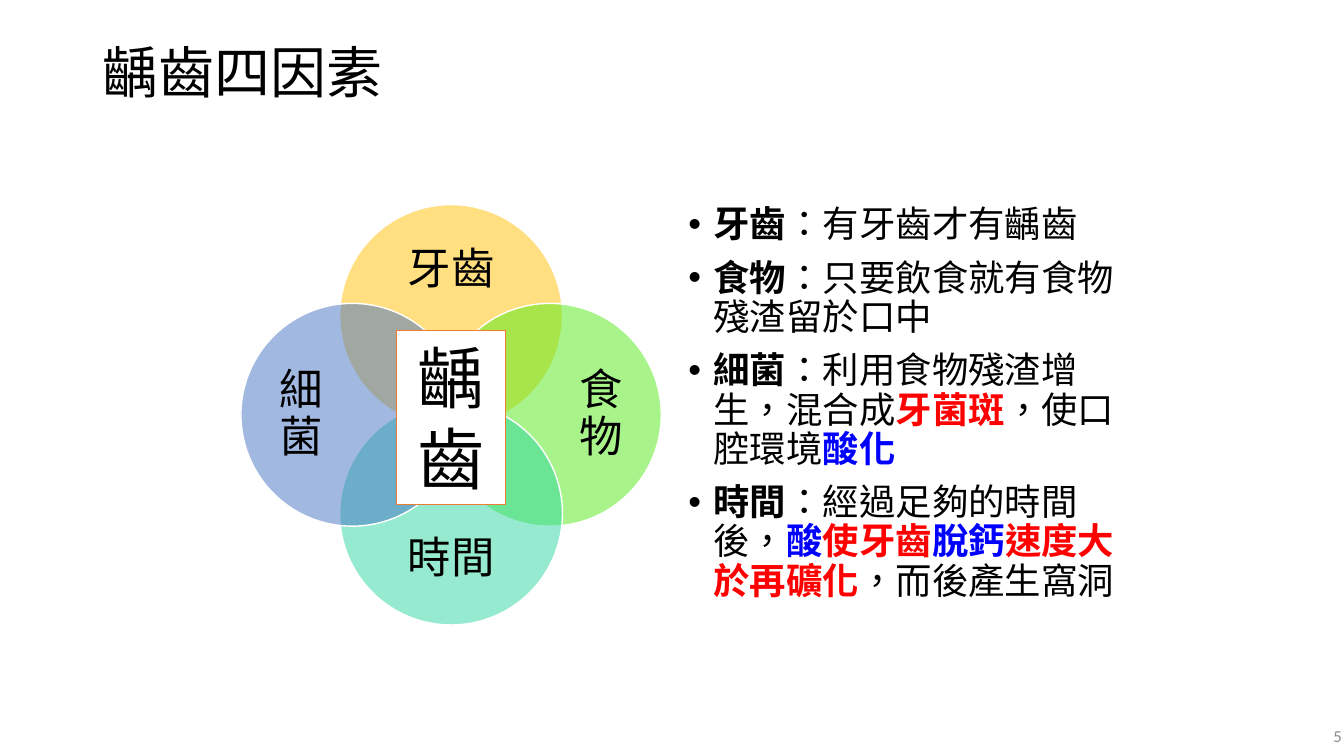
"""Build the slide on the four factors of tooth decay."""
from lxml.etree import SubElement as Sub
from pptx import Presentation
from pptx.dml.color import RGBColor as Rgb
from pptx.enum.shapes import MSO_SHAPE as Kind
from pptx.enum.text import MSO_ANCHOR as Anchor, PP_ALIGN as Align
from pptx.oxml.ns import qn
from pptx.util import Inches, Pt

CELL = Inches(0.1)
COLS, ROWS = 133.33, 75
HAN, LATIN = "Noto Sans CJK SC", "Calibri"
HUE = {
    "ink": "000000", "white": "FFFFFF", "gray": "8C8C8C",
    "red": "FF0000", "blue": "0000FF", "edge": "ED7D31",
    "gold": "FFC000", "lime": "53EB17", "mint": "2ED7A1", "navy": "4472C4",
}
HUB = (44.75, 41.15)
CORE = (44.75, 41.4, 10.8, 17.2)
SIZE, STEP = 22.1, 9.8
PETALS = [
    ("牙齒", "gold", 0, -1),
    ("食物", "lime", 1, 0),
    ("時間", "mint", 0, 1),
    ("細菌", "navy", -1, 0),
]
NOTES = [
    [("牙齒", "ink", True), ("：有牙齒才有齲齒", "ink", False)],
    [("食物", "ink", True), ("：只要飲食就有食物殘渣留於口中", "ink", False)],
    [("細菌", "ink", True), ("：利用食物殘渣增生，混合成", "ink", False),
     ("牙菌斑", "red", True), ("，使口腔環境", "ink", False),
     ("酸化", "blue", True)],
    [("時間", "ink", True), ("：經過足夠的時間後，", "ink", False),
     ("酸", "blue", True), ("使牙齒", "red", True), ("脫鈣", "blue", True),
     ("速度大於再礦化", "red", True), ("，而後產生窩洞", "ink", False)],
]


def color(name):
    return Rgb.from_string(HUE[name])


def cells(*nums):
    return [round(num * CELL) for num in nums]


def center(x, y, wide, high):
    return x - wide / 2, y - high / 2, wide, high


def write(para, text, size, hue="ink", bold=False, face=HAN):
    run = para.add_run()
    run.text = text
    font = run.font
    font.size, font.bold = Pt(size), bold
    font.color.rgb = color(hue)
    font.name = face
    props = run._r.get_or_add_rPr()
    props.set("lang", "zh-TW")
    Sub(props, qn("a:ea"), typeface=LATIN)


def add_box(slide, area, anchor=Anchor.MIDDLE, inset=None):
    frame = slide.shapes.add_textbox(*cells(*area)).text_frame
    frame.word_wrap = True
    frame.vertical_anchor = anchor
    if inset is not None:
        frame.margin_left = frame.margin_right = inset
        frame.margin_top = frame.margin_bottom = inset
    return frame


def add_form(slide, kind, area, fill, line, width=1, alpha=None):
    form = slide.shapes.add_shape(kind, *cells(*area))
    form.shadow.inherit = False
    form.fill.solid()
    form.fill.fore_color.rgb = color(fill)
    form.line.color.rgb = color(line)
    form.line.width = Pt(width)
    if alpha:
        tint = form._element.spPr.find(qn("a:solidFill"))[0]
        Sub(tint, qn("a:alpha"), val=str(alpha * 1000))
    return form


def add_petal(slide, text, hue, dx, dy):
    x, y = HUB
    disc = center(x + dx * STEP, y + dy * STEP, SIZE, SIZE)
    add_form(slide, Kind.OVAL, disc, hue, "white", alpha=50)
    wide, high = (8.5, 17) if dx else (17, 7)
    area = center(x + dx * 14.85, y + dy * 14.35, wide, high)
    para = add_box(slide, area, inset=0).paragraphs[0]
    para.alignment, para.line_spacing = Align.CENTER, 0.9
    write(para, text, 31)


def add_core(slide, text):
    form = add_form(slide, Kind.RECTANGLE, center(*CORE),
                    "white", "edge", width=0.5)
    frame = form.text_frame
    frame.word_wrap = True
    frame.vertical_anchor = Anchor.MIDDLE
    para = frame.paragraphs[0]
    para.alignment = Align.CENTER
    write(para, text, 48, face=LATIN)


def add_notes(slide, area, notes):
    frame = add_box(slide, area, Anchor.TOP)
    for row, parts in enumerate(notes):
        para = frame.add_paragraph() if row else frame.paragraphs[0]
        props = para._p.get_or_add_pPr()
        props.set("marL", str(Inches(0.25)))
        props.set("indent", str(-Inches(0.25)))
        props.set("hangingPunct", "0")
        Sub(props, qn("a:buFont"), typeface="Arial")
        Sub(props, qn("a:buChar"), char="•")
        para.line_spacing = 0.9
        if row:
            para.space_before = Pt(10)
        for text, hue, bold in parts:
            write(para, text, 26, hue, bold)


def main():
    deck = Presentation()
    deck.slide_width, deck.slide_height = cells(COLS, ROWS)
    slide = deck.slides.add_slide(deck.slide_layouts[6])
    title = add_box(slide, (9.2, 2.1, 115, 10.7)).paragraphs[0]
    title.line_spacing = 0.9
    write(title, "齲齒四因素", 40)
    for petal in PETALS:
        add_petal(slide, *petal)
    add_notes(slide, (67.3, 20, 44.8, 47.6), NOTES)
    page = add_box(slide, (128.7, 71, 5.4, 4)).paragraphs[0]
    page.alignment = Align.RIGHT
    write(page, "5", 12, "gray", face=LATIN)
    add_core(slide, "齲齒")
    deck.save("out.pptx")


if __name__ == "__main__":
    main()
